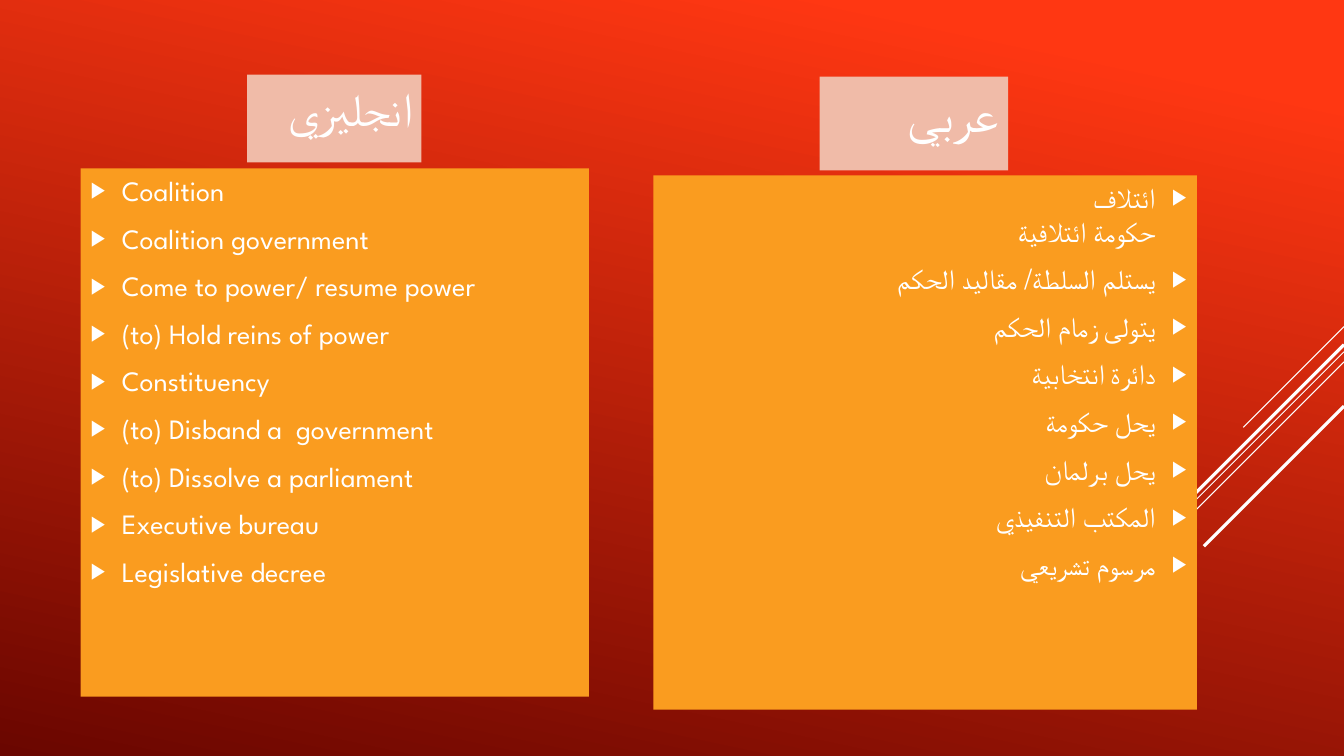
from lxml import etree
from pptx import Presentation
from pptx.dml.color import RGBColor as RGB
from pptx.enum.shapes import MSO_CONNECTOR as Conn
from pptx.enum.text import MSO_ANCHOR as Anchor, MSO_AUTO_SIZE as Fit, PP_ALIGN as Align
from pptx.oxml.ns import qn
from pptx.util import Inches, Pt

COLORS = {"bright": "FF3712", "dark": "6A0600", "panel": "FA9C1F",
          "label": "F0BBA8", "white": "FFFFFF"}
FONT = "League Spartan"
WIDTH, HEIGHT = 13.33, 7.5
INDENT = 0.31

ENGLISH = ["Coalition", "Coalition government", "Come to power/ resume power",
           "(to) Hold reins of power", "Constituency", "(to) Disband a  government",
           "(to) Dissolve a parliament", "Executive bureau", "Legislative decree"]
ARABIC = ["ائتلاف\nحكومة ائتلافية", "يستلم السلطة/ مقاليد الحكم", "يتولى زمام الحكم",
          "دائرة انتخابية", "يحل حكومة", "يحل برلمان", "المكتب التنفيذي", "مرسوم تشريعي"]

# Top at the right edge, run to the lower left, line width
STREAKS = [(3.24, 1, 0.75), (3.49, 3.26, 0.75), (3.59, 2.07, 0.75),
           (3.42, 1.91, 2.25), (4.03, 1.39, 2.25)]


def color(name):
    return RGB.from_string(COLORS[name])


def paint_back(slide):
    fill = slide.background.fill
    fill.gradient()
    fill.gradient_angle = 258
    for stop, name, pos in zip(fill.gradient_stops, ("bright", "dark"), (0.1, 1)):
        stop.color.rgb = color(name)
        stop.position = pos


def draw_streaks(slide):
    tree = slide.shapes._spTree
    for spot, (top, run, width) in enumerate(STREAKS, 2):
        line = slide.shapes.add_connector(
            Conn.STRAIGHT, Inches(WIDTH), Inches(top),
            Inches(WIDTH - run), Inches(top + run))
        line.line.color.rgb = color("white")
        line.line.width = Pt(width)
        etree.SubElement(line._element.spPr, qn("a:effectLst"))
        tree.insert(spot, line._element)  # behind the panels


def add_bullet(props):
    tint = etree.SubElement(props, qn("a:buClr"))
    etree.SubElement(tint, qn("a:srgbClr"), val=COLORS["white"])
    etree.SubElement(props, qn("a:buSzPct"), val="80000")
    etree.SubElement(props, qn("a:buChar"), char="▶")


def fill_box(shape, box, fill, items, size, rtl=False, bullet=False):
    shape.left, shape.top, shape.width, shape.height = map(Inches, box)
    shape.fill.solid()
    shape.fill.fore_color.rgb = color(fill)
    frame = shape.text_frame
    frame.word_wrap = True
    frame.auto_size = Fit.NONE
    frame.vertical_anchor = Anchor.TOP
    for row, item in enumerate(items):
        para = frame.add_paragraph() if row else frame.paragraphs[0]
        para.alignment = Align.RIGHT if rtl else Align.LEFT
        para.space_after = Pt(6)
        props = para._p.get_or_add_pPr()
        props.set("marL", str(Inches(INDENT)))
        props.set("indent", str(-Inches(INDENT)))
        if rtl:
            props.set("rtl", "1")
        if bullet:
            add_bullet(props)
        for part, text in enumerate(item.split("\n")):
            if part:
                para.add_line_break()
            run = para.add_run()
            run.text = text
            font = run.font
            font.name, font.size, font.bold = FONT, Pt(size), False
            font.color.rgb = color("white")


def add_column(head, body, box, tab, title, size, items, rtl):
    """Fill a word list in box, with its label at the offset tab."""
    left, top = box[:2]
    dx, dy, width, height = tab
    fill_box(body, box, "panel", items, 20, rtl, bullet=True)
    fill_box(head, (left + dx, top + dy, width, height), "label", [title], size, rtl=True)


def build_slide(deck):
    slide = deck.slides.add_slide(deck.slide_layouts[4])
    title = slide.shapes.title._element
    title.getparent().remove(title)
    holders = {item.placeholder_format.idx: item for item in slide.placeholders}
    paint_back(slide)
    draw_streaks(slide)
    # English on the left, Arabic on the right
    add_column(holders[1], holders[2], (0.8, 1.67, 5.04, 5.24),
               (1.65, -0.93, 1.73, 0.87), "انجليزي", 33.3, ENGLISH, False)
    add_column(holders[3], holders[4], (6.48, 1.74, 5.39, 5.3),
               (1.65, -0.98, 1.87, 0.93), "عربي", 36, ARABIC, True)


def main():
    deck = Presentation()
    deck.slide_width, deck.slide_height = Inches(WIDTH), Inches(HEIGHT)
    build_slide(deck)
    deck.save("out.pptx")


if __name__ == "__main__":
    main()
